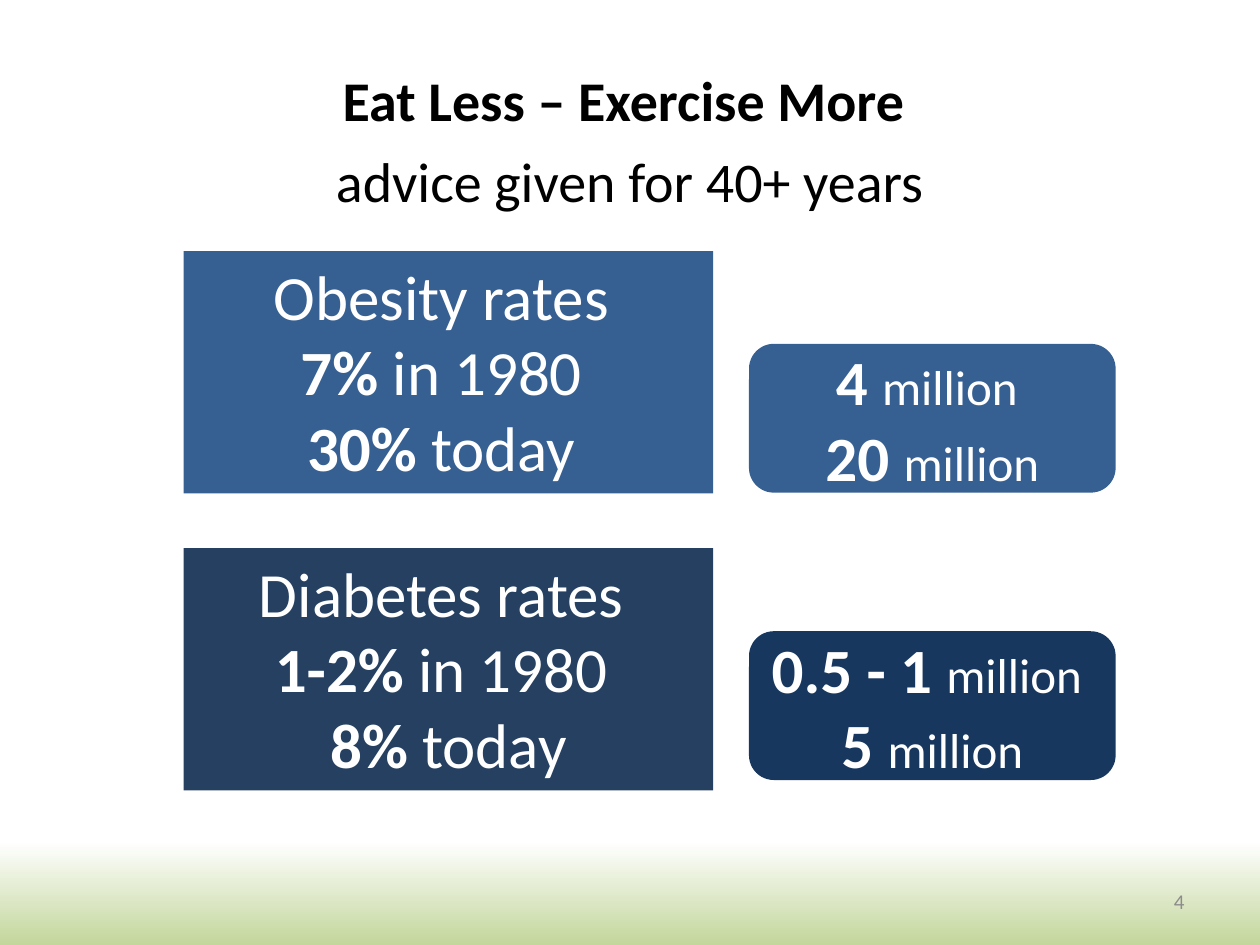
from pptx import Presentation
from pptx.dml.color import RGBColor
from pptx.enum.shapes import MSO_SHAPE
from pptx.enum.text import MSO_ANCHOR, MSO_AUTO_SIZE, PP_ALIGN
from pptx.util import Pt

HUES = {
    "white": "FFFFFF",
    "black": "000000",
    "green": "C3D69B",
    "blue": "376092",
    "slate": "254061",
    "navy": "17375E",
    "grey": "8C8C8C",
}


def hue(name):
    return RGBColor.from_string(HUES[name])


def write(shape, lines, tone, anchor, align=PP_ALIGN.CENTER, space=None, grow=False):
    frame = shape.text_frame
    frame.word_wrap = True
    frame.vertical_anchor = anchor
    if grow:
        frame.auto_size = MSO_AUTO_SIZE.SHAPE_TO_FIT_TEXT
    for n, line in enumerate(lines):
        para = frame.add_paragraph() if n else frame.paragraphs[0]
        para.alignment = align
        para.line_spacing = space
        for text, size, bold in line:
            run = para.add_run()
            run.text = text
            run.font.name = "Calibri"
            run.font.size = Pt(size)
            run.font.bold = bold
            run.font.color.rgb = hue(tone)


deck = Presentation()
deck.slide_width, deck.slide_height = Pt(720), Pt(540)
slide = deck.slides.add_slide(deck.slide_layouts[6])
shapes = slide.shapes

fill = slide.background.fill
fill.gradient()
fill.gradient_angle = 270
for stop, place, name in zip(fill.gradient_stops, (0.89, 1), ("white", "green")):
    stop.position = place
    stop.color.rgb = hue(name)

title = shapes.add_textbox(Pt(48), Pt(26.5), Pt(624), Pt(100))
heads = [
    [("Eat Less – Exercise More ", 32, True)],
    [("advice given for 40+ years", 32, False)],
]
write(title, heads, "black", MSO_ANCHOR.TOP, space=1.2, grow=True)

rates = [
    [("Obesity rates ", 36, False)],
    [("7%", 36, True), (" in 1980 ", 36, False)],
    [("30% ", 36, True), ("today ", 36, False)],
]
cases = [
    [("Diabetes rates ", 36, False)],
    [("1-2%", 36, True), (" in 1980 ", 36, False)],
    [("8% ", 36, True), ("today", 36, False)],
]
many = [
    [("4 ", 36, True), ("million ", 28, False)],
    [("20 ", 36, True), ("million", 28, False)],
]
few = [
    [("0.5 - 1 ", 36, True), ("million ", 28, False)],
    [("5 ", 36, True), ("million", 28, False)],
]
panel = (MSO_SHAPE.RECTANGLE, 105, 302.5, 138.5, MSO_ANCHOR.TOP, True)
badge = (MSO_SHAPE.ROUNDED_RECTANGLE, 428, 209.5, 85, MSO_ANCHOR.MIDDLE, False)
boxes = [
    (panel, 143.5, "blue", rates),
    (panel, 313.2, "slate", cases),
    (badge, 196.5, "blue", many),
    (badge, 360.7, "navy", few),
]
for (kind, left, width, height, anchor, grow), top, name, lines in boxes:
    box = shapes.add_shape(kind, Pt(left), Pt(top), Pt(width), Pt(height))
    box.shadow.inherit = False
    box.fill.solid()
    box.fill.fore_color.rgb = hue(name)
    box.line.fill.background()
    write(box, lines, "white", anchor, grow=grow)

page = shapes.add_textbox(Pt(516), Pt(500.5), Pt(168), Pt(28.75))
write(page, [[("4", 12, False)]], "grey", MSO_ANCHOR.MIDDLE, PP_ALIGN.RIGHT)

deck.save("out.pptx")
